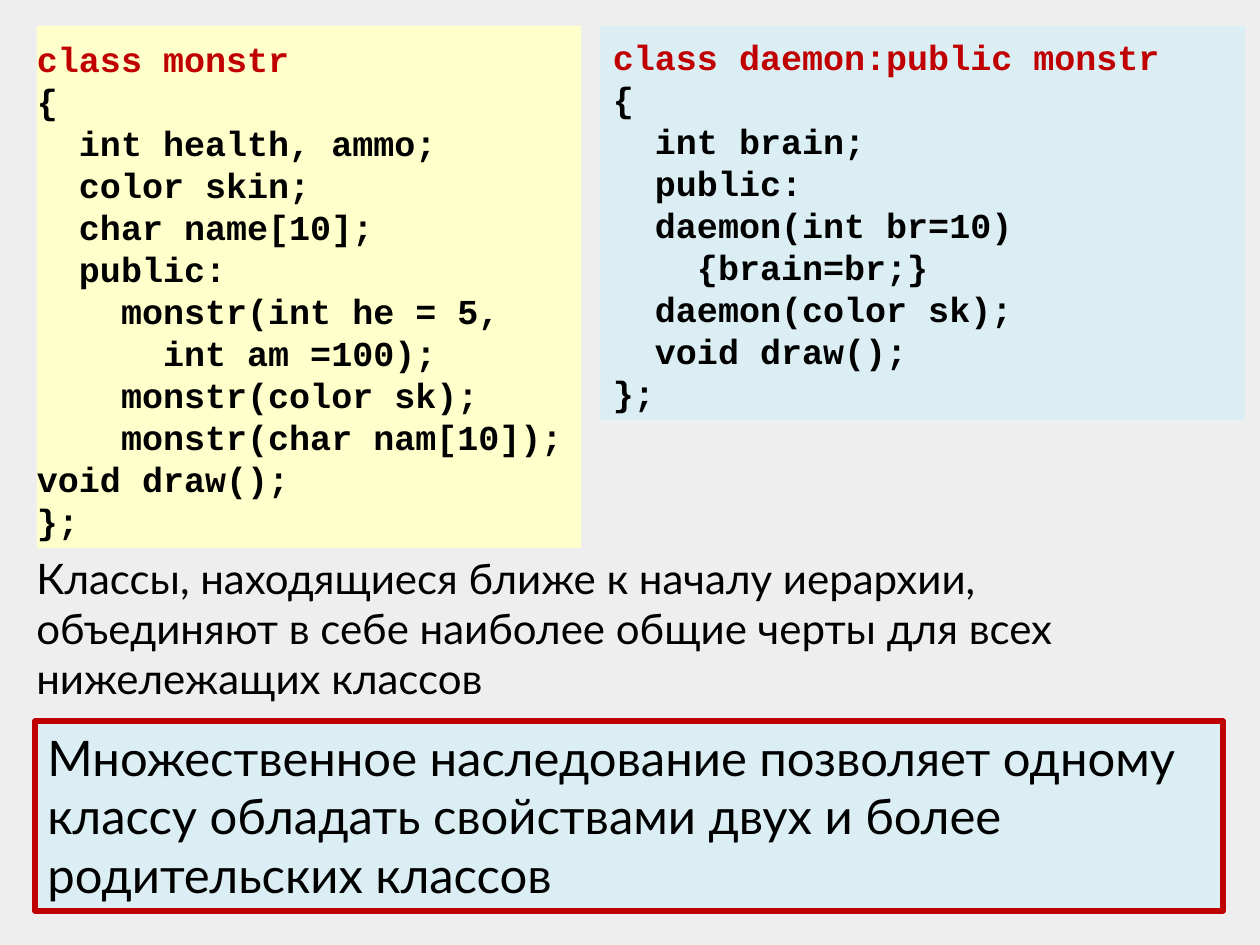
from pptx import Presentation
from pptx.dml.color import RGBColor
from pptx.enum.shapes import MSO_SHAPE
from pptx.enum.text import MSO_ANCHOR, PP_ALIGN
from pptx.util import Emu, Pt

PX = 914400 / 126
BLACK, RED = "000000", "C00000"
YELLOW, BLUE, GREY = "FFFFCC", "DBEEF4", "EEEEEE"

MONSTR = """class monstr
{
  int health, ammo;
  color skin;
  char name[10];
  public:
    monstr(int he = 5,
      int am =100);
    monstr(color sk);
    monstr(char nam[10]);
void draw();
};"""

DAEMON = """class daemon:public monstr
{
  int brain;
  public:
  daemon(int br=10)
    {brain=br;}
  daemon(color sk);
  void draw();
};"""

HIERARCHY = ("Классы, находящиеся ближе к началу иерархии, объединяют в себе "
             "наиболее общие черты для всех нижележащих классов")
MULTIPLE = ("Множественное наследование позволяет одному классу обладать "
            "свойствами двух и более родительских классов")


def px(n):
    return Emu(round(n * PX))


def rgb(value):
    return RGBColor.from_string(value)


class Deck:
    text_font, code_font = "Lato", "Courier New"
    code_size, code_pitch = Pt(20), Pt(24)

    def __init__(self, width, height, background):
        self.prs = Presentation()
        self.prs.slide_width, self.prs.slide_height = px(width), px(height)
        self.s = self.prs.slides.add_slide(self.prs.slide_layouts[6])
        fill = self.s.background.fill
        fill.solid()
        fill.fore_color.rgb = rgb(background)

    def style(self, p, font, size, color, bold=False):
        p.alignment = PP_ALIGN.LEFT
        p.font.name, p.font.size, p.font.bold = font, size, bold
        p.font.color.rgb = rgb(color)

    def text(self, box, words, size):
        sp = self.s.shapes.add_textbox(*map(px, box))
        self.fill_text(sp.text_frame, words, size)

    def fill_text(self, tf, words, size):
        tf.word_wrap = True
        tf.text = words
        self.style(tf.paragraphs[0], self.text_font, Pt(size), BLACK)

    def panel(self, box, fill, line=None):
        sp = self.s.shapes.add_shape(MSO_SHAPE.RECTANGLE, *map(px, box))
        sp.shadow.inherit = False
        sp.fill.solid()
        sp.fill.fore_color.rgb = rgb(fill)
        if line:
            sp.line.color.rgb = rgb(line)
            sp.line.width = Pt(3)
        else:
            sp.line.fill.background()
        return sp

    def callout(self, box, words, size):
        tf = self.panel(box, BLUE, RED).text_frame
        tf.vertical_anchor = MSO_ANCHOR.TOP
        self.fill_text(tf, words, size)

    def code(self, box, source, fill, inset):
        """Listing panel whose first line is highlighted."""
        tf = self.panel(box, fill).text_frame
        tf.word_wrap = True
        tf.vertical_anchor = MSO_ANCHOR.BOTTOM
        tf.margin_left = tf.margin_right = px(inset)
        tf.text = source
        for i, p in enumerate(tf.paragraphs):
            p.line_spacing = self.code_pitch
            self.style(p, self.code_font, self.code_size,
                       BLACK if i else RED, bold=True)


def main():
    deck = Deck(1260, 945, GREY)
    deck.text((24, 546, 1200, 165), HIERARCHY, 24)
    deck.callout((35, 721, 1188, 190), MULTIPLE, 28)
    deck.code((37, 26, 544, 522), MONSTR, YELLOW, 0)
    deck.code((600, 26, 645, 394), DAEMON, BLUE, 13)
    deck.prs.save("out.pptx")


if __name__ == "__main__":
    main()
